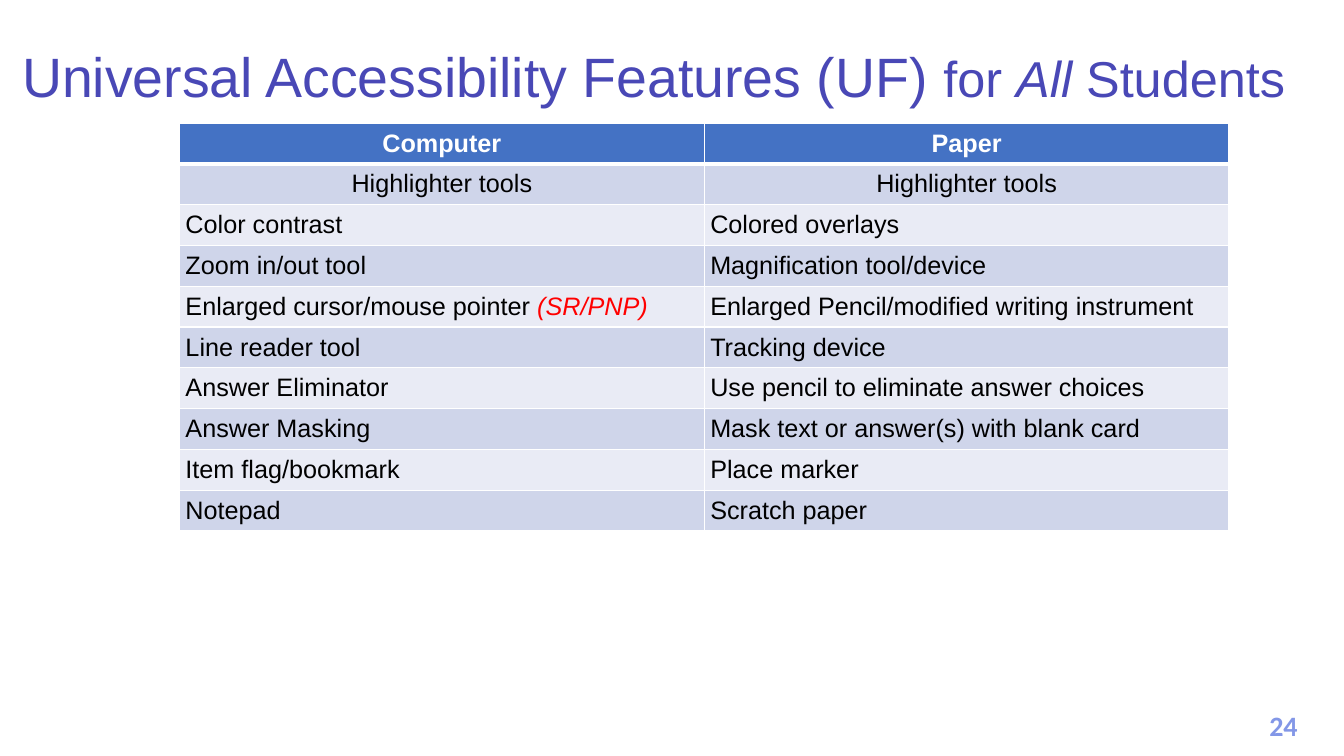
from pptx import Presentation
from pptx.dml.color import RGBColor
from pptx.enum import text
from pptx.oxml import parse_xml
from pptx.oxml.ns import nsdecls
from pptx.util import Inches, Pt

# Content
TITLE = [("Universal Accessibility Features (UF)\u00a0", 39.6, False), ("for ", 36, False),
         ("All", 36, True), (" Students", 36, False)]
PAGE_NUMBER = "24"
HEADER = ("Computer", "Paper")
FEATURES = [
    ("Highlighter tools", "Highlighter tools"),
    ("Color contrast", "Colored overlays"),
    ("Zoom in/out tool", "Magnification tool/device"),
    ("Enlarged cursor/mouse pointer ", "Enlarged Pencil/modified writing instrument"),
    ("Line reader tool", "Tracking device"),
    ("Answer Eliminator", "Use pencil to eliminate answer choices"),
    ("Answer Masking", "Mask text or answer(s) with blank card"),
    ("Item flag/bookmark", "Place marker"),
    ("Notepad", "Scratch paper"),
]
RED_NOTES = {(4, 0): "(SR/PNP)"}
CENTERED_ROWS = (0, 1)
INDENTED_ROWS = (1, 8, 9)

# Layout and colours
TABLE_LEFT, TABLE_TOP, TABLE_WIDTH, TABLE_HEIGHT = 1.78, 1.22, 10.41, 4.05
HEADER_FILL, BANDS = "4472C4", ("E9EBF5", "CFD5EA")
WHITE, BLACK, RED = "FFFFFF", "000000", "FF0000"
TITLE_COLOR, NUMBER_COLOR = "4948B6", "8397E7"


def color(hex_code):
    return RGBColor.from_string(hex_code)


def set_font(font, name, size, hex_code, bold=False):
    font.name, font.size, font.bold = name, Pt(size), bold
    font.color.rgb = color(hex_code)


def add_box(page, left, top, width, height):
    box = page.shapes.add_textbox(Inches(left), Inches(top), Inches(width), Inches(height))
    box.text_frame.word_wrap = True
    return box.text_frame


def set_borders(cell, top, bottom):
    for side, points in (("L", 1), ("R", 1), ("T", top), ("B", bottom)):
        cell._tc.get_or_add_tcPr().append(parse_xml(
            f'<a:ln{side} {nsdecls("a")} w="{Pt(points)}"><a:solidFill>'
            f'<a:srgbClr val="{WHITE}"/></a:solidFill></a:ln{side}>'))


def fill_cell(cell, row, column, words):
    is_header = row == 0
    set_borders(cell, 3 if row == 1 else 1, 3 if is_header else 1)
    cell.fill.solid()
    cell.fill.fore_color.rgb = color(HEADER_FILL if is_header else BANDS[row % 2])
    cell.vertical_anchor = text.MSO_ANCHOR.MIDDLE
    cell.margin_left = cell.margin_right = Inches(0.06)
    cell.margin_top = cell.margin_bottom = 0

    para = cell.text_frame.paragraphs[0]
    para.add_run().text = words
    if row in CENTERED_ROWS:
        para.alignment = text.PP_ALIGN.CENTER
    if row in INDENTED_ROWS:
        properties = para._p.get_or_add_pPr()
        properties.set("marL", str(Inches(0.25)))
        properties.set("indent", str(-Inches(0.25)))
    if not is_header:
        para.space_after = Pt(4)
    set_font(para.font, "Arial", 18, WHITE if is_header else BLACK, is_header)
    if (row, column) in RED_NOTES:
        span = para.add_run()
        span.text = RED_NOTES[row, column]
        span.font.italic = True
        span.font.color.rgb = color(RED)


def main():
    deck = Presentation()
    deck.slide_width, deck.slide_height = Inches(13.33), Inches(7.5)
    page = deck.slides.add_slide(deck.slide_layouts[6])

    # Page number
    para = add_box(page, 12.42, 6.98, 0.62, 0.44).paragraphs[0]
    para.text = PAGE_NUMBER
    para.alignment = text.PP_ALIGN.CENTER
    set_font(para.font, "Calibri", 20, NUMBER_COLOR, True)

    # Title
    frame = add_box(page, 0.12, 0.36, 13.09, 0.85)
    frame.vertical_anchor = text.MSO_ANCHOR.MIDDLE
    para = frame.paragraphs[0]
    para.line_spacing = 0.9
    for words, size, italic in TITLE:
        span = para.add_run()
        span.text = words
        set_font(span.font, "Arial", size, TITLE_COLOR)
        span.font.italic = italic

    # Feature table
    rows = [HEADER] + FEATURES
    table = page.shapes.add_table(
        len(rows), len(HEADER), Inches(TABLE_LEFT), Inches(TABLE_TOP),
        Inches(TABLE_WIDTH), Inches(TABLE_HEIGHT)).table
    for row, entries in enumerate(rows):
        for column, words in enumerate(entries):
            fill_cell(table.cell(row, column), row, column, words)

    deck.save("out.pptx")


if __name__ == "__main__":
    main()
